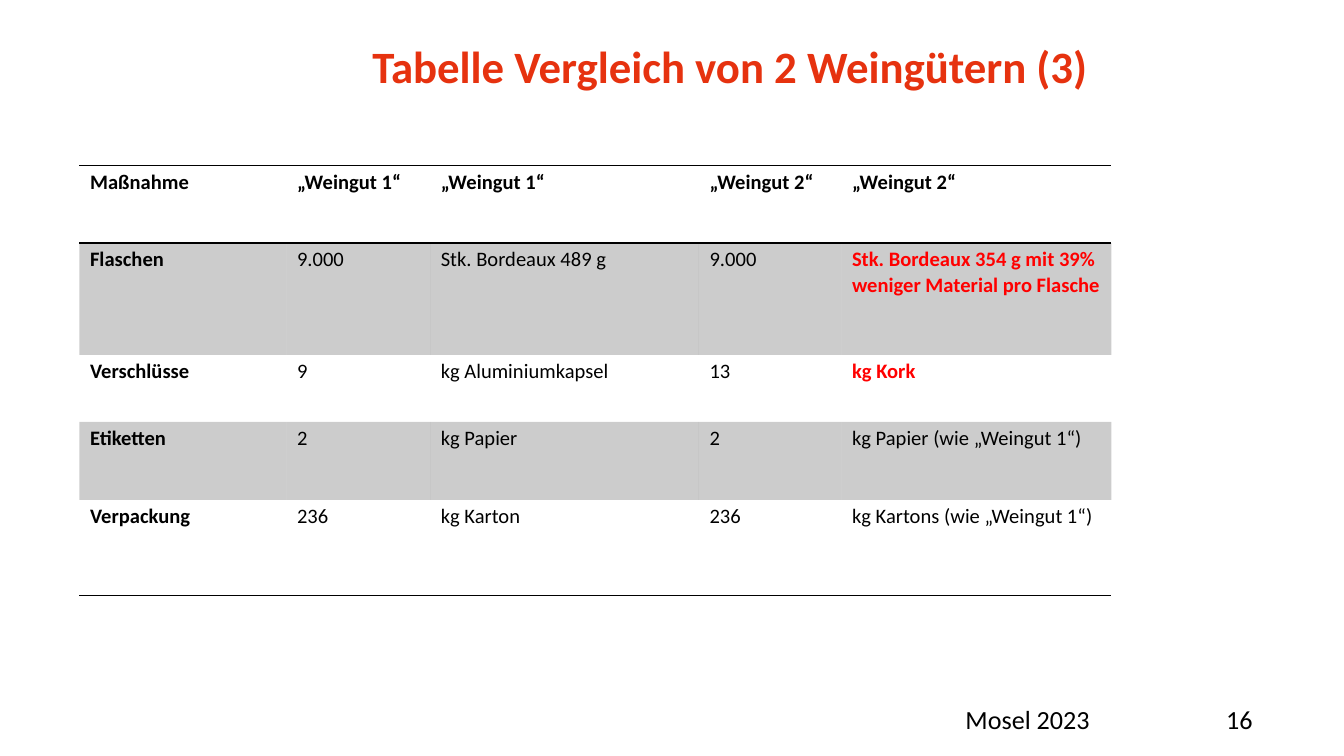
"""Build a slide with a table comparing the packaging of two wineries."""
from lxml import etree
from pptx import Presentation
from pptx.dml.color import RGBColor
from pptx.enum.text import MSO_ANCHOR, PP_ALIGN
from pptx.oxml.ns import qn
from pptx.util import Inches, Pt

TOP, MIDDLE = MSO_ANCHOR.TOP, MSO_ANCHOR.MIDDLE
LEFT, RIGHT = PP_ALIGN.LEFT, PP_ALIGN.RIGHT

THEME = {
    "font": "Calibri",
    "title": "E6320F",
    "text": "000000",
    "accent": "FF0000",
    "title_size": 24,
    "table_size": 11,
    "footer_size": 14,
    "band_alpha": 20,
    "rule_width": 1,
    "plain_table_style": "{2D5ABB26-0587-4C30-8999-92F81FD0307C}",
}

PAGE_WIDTH = 10
PAGE_HEIGHT = PAGE_WIDTH * 9 / 16
TITLE = "Tabelle Vergleich von 2 Weingütern (3)"
ROWS = [
    ("Maßnahme", "„Weingut 1“", "„Weingut 1“", "„Weingut 2“", "„Weingut 2“"),
    ("Flaschen", "9.000", "Stk. Bordeaux 489 g", "9.000",
     "Stk. Bordeaux 354 g mit 39% weniger Material pro Flasche"),
    ("Verschlüsse", "9", "kg Aluminiumkapsel", "13", "kg Kork"),
    ("Etiketten", "2", "kg Papier", "2", "kg Papier (wie „Weingut 1“)"),
    ("Verpackung", "236", "kg Karton", "236", "kg Kartons (wie „Weingut 1“)"),
]
HIGHLIGHTS = {(1, 4), (2, 4)}
COLUMN_WIDTHS = [1.54, 1.07, 2, 1.06, 2.01]
ROW_HEIGHTS = [0.58, 0.83, 0.5, 0.58, 0.71]
TABLE_LEFT, TABLE_TOP = 0.59, 1.23
FOOTERS = [("16", 8.27, 1.05), ("Mosel 2023", 0.59, 7.52)]
FOOTER_TOP, FOOTER_HEIGHT = 5.24, 0.22


def style_text(frame, size, color, bold=False, align=LEFT):
    for para in frame.paragraphs:
        para.alignment = align
        for span in para.runs:
            span.font.name = THEME["font"]
            span.font.size = Pt(size)
            span.font.bold = bold
            span.font.color.rgb = RGBColor.from_string(color)


def clear_margins(frame):
    frame.margin_left = frame.margin_right = 0
    frame.margin_top = frame.margin_bottom = 0


def add_rules(cell, tags):
    properties = cell._tc.get_or_add_tcPr()
    for position, tag in enumerate(tags):
        line = etree.Element(qn(tag), w=str(Pt(THEME["rule_width"])))
        fill = etree.SubElement(line, qn("a:solidFill"))
        etree.SubElement(fill, qn("a:srgbClr"), val=THEME["text"])
        properties.insert(position, line)


def shade(cell):
    cell.fill.solid()
    cell.fill.fore_color.rgb = RGBColor.from_string(THEME["text"])
    color = cell._tc.tcPr.find(qn("a:solidFill")).find(qn("a:srgbClr"))
    etree.SubElement(color, qn("a:alpha"), val=str(THEME["band_alpha"] * 1000))


def add_title(page):
    title = page.shapes.title
    title.left, title.top = Inches(2.77), Inches(0.27)
    title.width, title.height = Inches(6.54), Inches(0.43)
    frame = title.text_frame
    frame.text = TITLE
    frame.word_wrap = False
    frame.vertical_anchor = TOP
    clear_margins(frame)
    frame.paragraphs[0].line_spacing = Pt(30)
    style_text(frame, THEME["title_size"], THEME["title"], bold=True)


def add_comparison(page):
    table = page.shapes.add_table(
        len(ROWS), len(COLUMN_WIDTHS), Inches(TABLE_LEFT), Inches(TABLE_TOP),
        Inches(sum(COLUMN_WIDTHS)), Inches(sum(ROW_HEIGHTS))).table
    table._tbl.tblPr.find(qn("a:tableStyleId")).text = THEME["plain_table_style"]
    for column, width in zip(table.columns, COLUMN_WIDTHS):
        column.width = Inches(width)
    for row, height in zip(table.rows, ROW_HEIGHTS):
        row.height = Inches(height)
    rules = {0: ("a:lnT", "a:lnB"), len(ROWS) - 1: ("a:lnB",)}
    for r, values in enumerate(ROWS):
        for c, value in enumerate(values):
            cell = table.cell(r, c)
            cell.text_frame.text = value
            cell.margin_left = cell.margin_right = Inches(0.08)
            cell.margin_top = cell.margin_bottom = Inches(0.03)
            marked = (r, c) in HIGHLIGHTS
            style_text(cell.text_frame, THEME["table_size"],
                       THEME["accent"] if marked else THEME["text"],
                       bold=marked or r == 0 or c == 0)
            if r % 2:
                shade(cell)
            else:
                cell.fill.background()
            add_rules(cell, rules.get(r, ()))


def add_footers(page):
    for text, left, width in FOOTERS:
        box = page.shapes.add_textbox(
            Inches(left), Inches(FOOTER_TOP), Inches(width), Inches(FOOTER_HEIGHT))
        frame = box.text_frame
        frame.text = text
        frame.word_wrap = True
        frame.vertical_anchor = MIDDLE
        clear_margins(frame)
        style_text(frame, THEME["footer_size"], THEME["text"], align=RIGHT)


def main():
    deck = Presentation()
    deck.slide_width, deck.slide_height = Inches(PAGE_WIDTH), Inches(PAGE_HEIGHT)
    page = deck.slides.add_slide(deck.slide_layouts[5])
    add_title(page)
    add_comparison(page)
    add_footers(page)
    deck.save("out.pptx")


if __name__ == "__main__":
    main()
